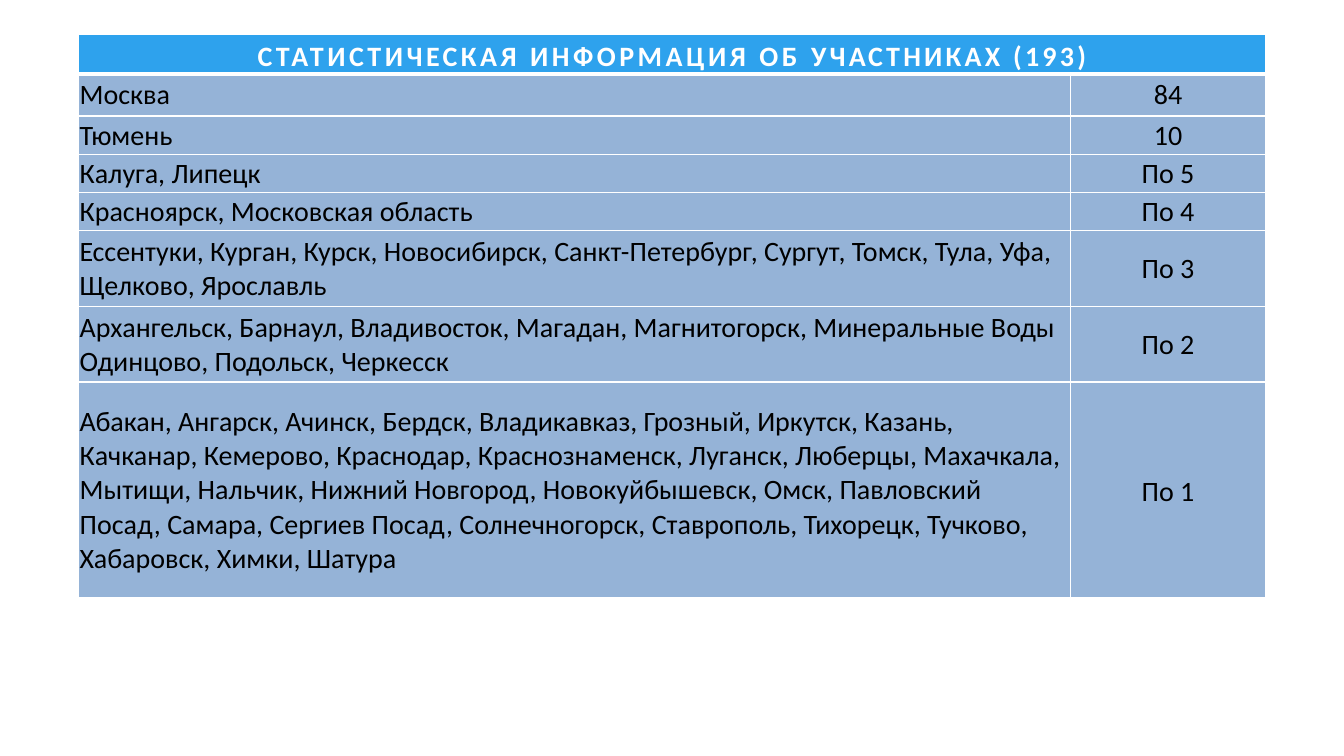
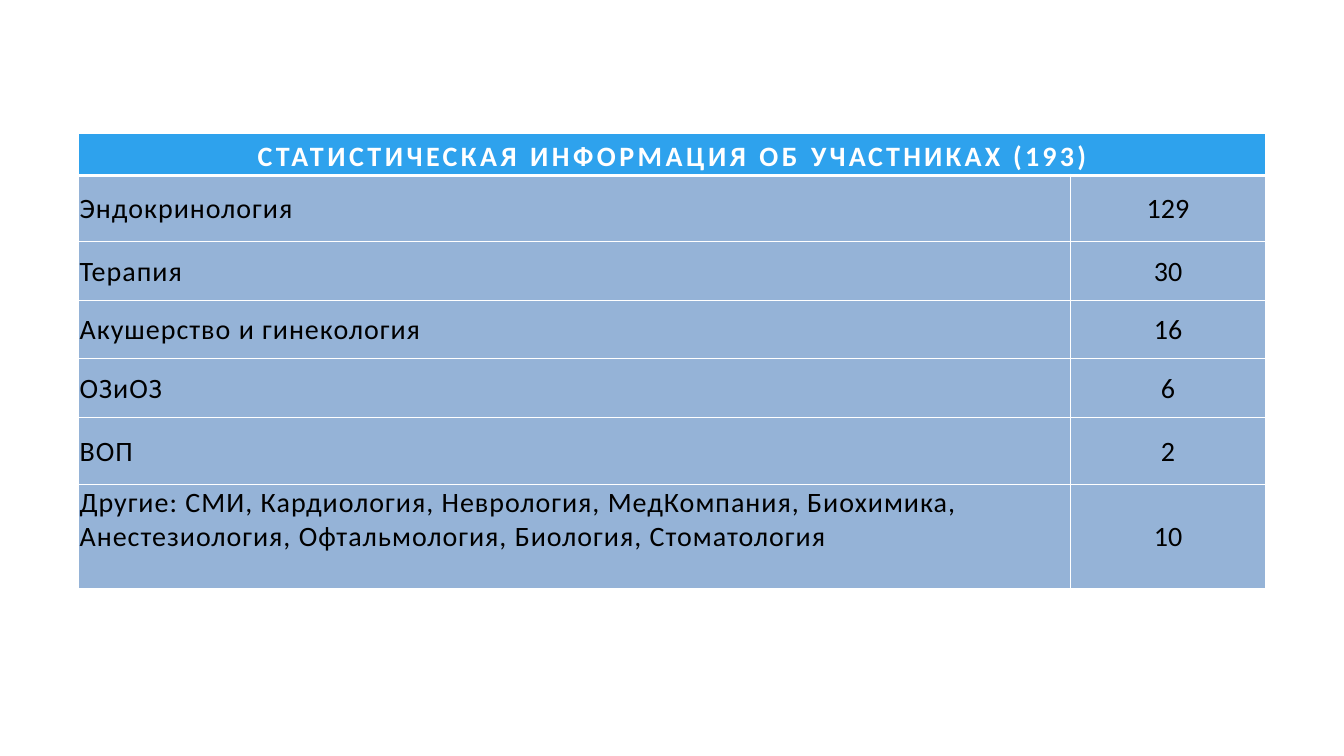
from lxml import etree
from pptx import Presentation
from pptx.dml.color import RGBColor
from pptx.enum.text import MSO_ANCHOR, PP_ALIGN
from pptx.oxml.ns import qn
from pptx.util import Inches, Pt

MIDDLE = MSO_ANCHOR.MIDDLE
LEFT, CENTER = PP_ALIGN.LEFT, PP_ALIGN.CENTER

HEAD = [("СТАТИСТИЧЕСКАЯ ИНФОРМАЦИЯ ОБ ", 2.5), ("УЧАСТНИКАХ (193)", 2.3)]
# Cell margins: left, top, right, bottom
TIGHT = (0.01, 0.01, 0.01, 0)
LOW = (0, 0.05, 0, 0)
RAISED = (0.01, 0.01, 0.01, 0.34)

# Each row: height, label, count, then the margins of the two cells if special
CITIES = [
    (0.42, "Москва", "84"),
    (0.38, "Тюмень", "10"),
    (0.38, "Калуга, Липецк", "По 5"),
    (0.38, "Красноярск, Московская область", "По 4"),
    (0.75, "Ессентуки, Курган, Курск, Новосибирск, Санкт-Петербург, Сургут, "
     "Томск, Тула, Уфа, Щелково, Ярославль", "По 3"),
    (0.75, "Архангельск, Барнаул, Владивосток, Магадан, Магнитогорск, "
     "Минеральные Воды\nОдинцово, Подольск, Черкесск", "По 2"),
    (2.14, "Абакан, Ангарск, Ачинск, Бердск, Владикавказ, Грозный, Иркутск, "
     "Казань, Качканар, Кемерово, Краснодар, Краснознаменск, Луганск, "
     "Люберцы, Махачкала, Мытищи, Нальчик, Нижний Новгород, "
     "Новокуйбышевск, Омск, Павловский Посад, Самара, Сергиев Посад, "
     "Солнечногорск, Ставрополь, Тихорецк, Тучково, Хабаровск, Химки, "
     "Шатура", "По 1", TIGHT, LOW),
]
FIELDS = [
    (0.66, "Эндокринология", "129"),
    (0.58, "Терапия", "30"),
    (0.58, "Акушерство и гинекология", "16"),
    (0.58, "ОЗиОЗ", "6"),
    (0.67, "ВОП", "2"),
    (1.02, "Другие: СМИ, Кардиология, Неврология, МедКомпания, Биохимика, "
     "Анестезиология, Офтальмология, Биология, Стоматология", "10",
     RAISED, TIGHT),
]


def color(code):
    return RGBColor.from_string(code)


class Deck:
    FONT, SIZE = "Calibri", 20
    BLUE, PALE, WHITE, BLACK = "2EA2ED", "95B3D7", "FFFFFF", "000000"
    COLS = (9.84, 1.93)
    EDGE = 0.78

    def __init__(self):
        self.prs = Presentation()
        self.prs.slide_width = Inches(13.33)
        self.prs.slide_height = Inches(7.5)

    def page(self):
        self.slide = self.prs.slides.add_slide(self.prs.slide_layouts[6])

    def run(self, para, text, ink, bold, gap):
        """Add one run; gap is the letter spacing in points."""
        run = para.add_run()
        run.text = text
        font = run.font
        font.name, font.size, font.bold = self.FONT, Pt(self.SIZE), bold
        font.color.rgb = color(ink)
        if gap:
            font._element.set("spc", str(round(gap * 100)))

    def frame(self, cell, top, base):
        """Draw the cell borders; top and base are widths in points."""
        props = cell._tc.get_or_add_tcPr()
        for side, width in (("L", 1), ("R", 1), ("T", top), ("B", base)):
            line = etree.SubElement(props, qn("a:ln" + side), w=str(Pt(width)))
            fill = etree.SubElement(line, qn("a:solidFill"))
            etree.SubElement(fill, qn("a:srgbClr"), val=self.WHITE)

    def cell(self, cell, lines, fill, ink, align, pad, bold=False,
             top=1, base=1):
        """Fill a cell; lines holds paragraphs of (text, gap) runs."""
        self.frame(cell, top, base)
        cell.fill.solid()
        cell.fill.fore_color.rgb = color(fill)
        cell.vertical_anchor = MIDDLE
        (cell.margin_left, cell.margin_top,
         cell.margin_right, cell.margin_bottom) = map(Inches, pad)
        frame = cell.text_frame
        for i, runs in enumerate(lines):
            para = frame.add_paragraph() if i else frame.paragraphs[0]
            para.alignment = align
            for text, gap in runs:
                self.run(para, text, ink, bold, gap)

    def table(self, top, head, rows, gap=0):
        """Add a table; head is the title height, gap the label spacing."""
        tall = [head] + [row[0] for row in rows]
        table = self.slide.shapes.add_table(
            len(tall), len(self.COLS), Inches(self.EDGE), Inches(top),
            Inches(sum(self.COLS)), Inches(sum(tall))).table
        table.horz_banding = False
        for col, width in zip(table.columns, self.COLS):
            col.width = Inches(width)
        for row, height in zip(table.rows, tall):
            row.height = Inches(height)

        title, rest = table.cell(0, 0), table.cell(0, 1)
        title.merge(rest)
        self.cell(title, [HEAD], self.BLUE, self.WHITE, CENTER, LOW,
                  bold=True, base=3)
        self.frame(rest, 1, 3)
        for i, (_, label, count, *pads) in enumerate(rows, 1):
            left, right = pads or (TIGHT, TIGHT)
            edge = 3 if i == 1 else 1
            lines = [[(text, gap)] for text in label.split("\n")]
            self.cell(table.cell(i, 0), lines, self.PALE, self.BLACK,
                      LEFT, left, top=edge)
            self.cell(table.cell(i, 1), [[(count, 0)]], self.PALE, self.BLACK,
                      CENTER, right, top=edge)


def main():
    deck = Deck()
    deck.page()
    deck.table(0.34, 0.38, CITIES)
    deck.page()
    deck.table(1.32, 0.42, FIELDS, gap=0.7)
    deck.prs.save("out.pptx")


if __name__ == "__main__":
    main()
